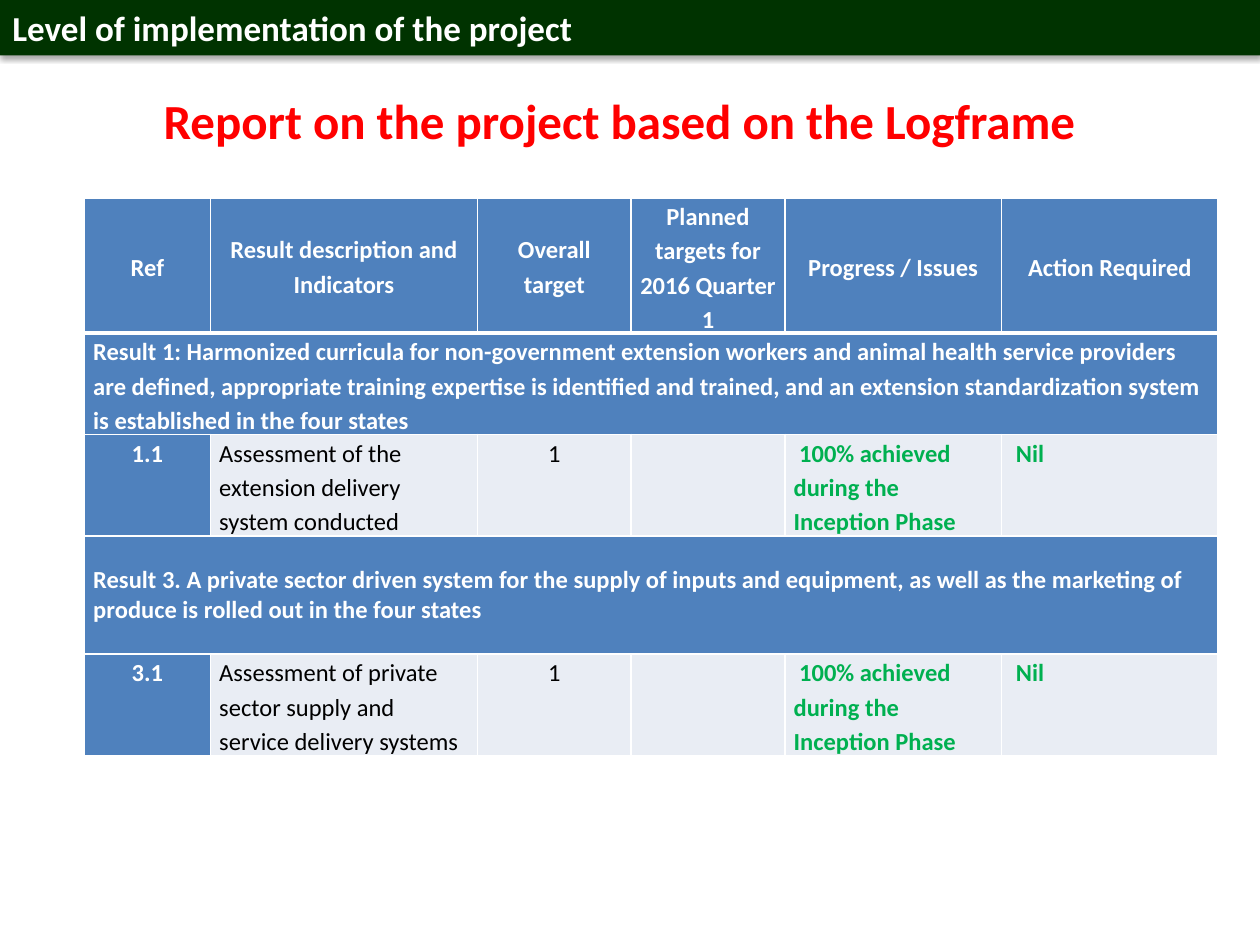
from lxml import etree
from pptx import Presentation
from pptx.dml.color import RGBColor
from pptx.enum import shapes, text
from pptx.oxml import parse_xml
from pptx.oxml.ns import nsdecls, qn
from pptx.util import Inches, Pt

WHITE, BLUE, PALE, GREEN = "FFFFFF", "4F81BD", "E9EDF4", "00B050"
COL_WIDTHS = [1, 2.12, 1.22, 1.22, 1.72, 1.72]
ROW_HEIGHTS = [1.07, 0.8, 0.8, 0.94, 0.8]
HEADERS = ["Ref", "Result description and Indicators", "Overall target",
           "Planned targets for 2016 Quarter 1", "Progress / Issues", "Action Required"]
RESULT_1 = ("Result 1: Harmonized curricula for non-government extension workers and animal "
            "health service providers are defined, appropriate training expertise is identified "
            "and trained, and an extension standardization system is established in the four states")
RESULT_3 = ("Result 3. A private sector driven system for the supply of inputs and equipment, "
            "as well as the marketing of produce is rolled out in the four states")
INDICATOR_1 = "Assessment of the extension delivery system conducted"
INDICATOR_3 = "Assessment of private sector supply and service delivery systems"
ACHIEVED, ACTION = " 100% achieved during the Inception Phase", " Nil"


def rgb(value):
    """Turn a hex string into a colour."""
    return RGBColor.from_string(value)


def write(tf, wording, size, color, bold=True, align=text.PP_ALIGN.LEFT, spacing=1.0):
    """Put one formatted paragraph into a text frame."""
    tf.word_wrap = True
    tf.text = wording
    p = tf.paragraphs[0]
    p.alignment, p.line_spacing = align, spacing
    for r in p.runs:
        r.font.name, r.font.size, r.font.bold = "Calibri", Pt(size), bold
        r.font.color.rgb = rgb(color)


def add_banner(s, wording):
    """Add the dark bar with a soft shadow across the top."""
    sp = s.shapes.add_shape(shapes.MSO_SHAPE.RECTANGLE, 0, 0, Inches(10), Inches(0.44))
    sp.fill.solid()
    sp.fill.fore_color.rgb = rgb("003300")
    sp.line.fill.background()
    sp._element.spPr.append(parse_xml(
        f'<a:effectLst {nsdecls("a")}><a:outerShdw blurRad="{Pt(3.1)}" dist="{Pt(1.8)}" '
        'dir="5400000" rotWithShape="0"><a:srgbClr val="000000"><a:alpha val="35000"/>'
        '</a:srgbClr></a:outerShdw></a:effectLst>'))
    write(sp.text_frame, wording, 20, WHITE)


def add_title(s, wording):
    """Add the red heading."""
    sp = s.shapes.add_textbox(Inches(1.2), Inches(0.67), Inches(7.58), Inches(0.57))
    write(sp.text_frame, wording, 28, "FF0000")


def set_borders(cell, bottom=1):
    """Draw white lines round a cell."""
    tcPr = cell._tc.get_or_add_tcPr()
    for i, (side, width) in enumerate([("L", 1), ("R", 1), ("T", 1), ("B", bottom)]):
        ln = etree.Element(qn(f"a:ln{side}"), w=str(Pt(width)))
        fill = etree.SubElement(ln, qn("a:solidFill"))
        etree.SubElement(fill, qn("a:srgbClr"), val=WHITE)
        tcPr.insert(i, ln)


def fill_cell(cell, wording, fill, color, bold=True, center=False,
              anchor=text.MSO_ANCHOR.TOP, spacing=1.15, bottom=1):
    """Fill, frame and write one table cell."""
    cell.fill.solid()
    cell.fill.fore_color.rgb = rgb(fill)
    set_borders(cell, bottom)
    cell.margin_left = cell.margin_right = Inches(0.07)
    cell.margin_top = cell.margin_bottom = 0
    cell.vertical_anchor = anchor
    align = text.PP_ALIGN.CENTER if center else text.PP_ALIGN.LEFT
    write(cell.text_frame, wording, 14, color, bold, align, spacing)


def fill_result(table, row, wording, anchor, spacing):
    """Write a result statement across the whole row."""
    for cell in table.rows[row].cells:
        set_borders(cell)
    first = table.cell(row, 0)
    first.merge(table.cell(row, len(COL_WIDTHS) - 1))
    for ln in list(first._tc.tcPr):
        first._tc.tcPr.remove(ln)
    fill_cell(first, wording, BLUE, WHITE, anchor=anchor, spacing=spacing)


def fill_indicator(table, row, ref, indicator):
    """Write one indicator row."""
    cells = [(ref, BLUE, WHITE, True, True), (indicator, PALE, "000000", False, False),
             ("1", PALE, "000000", False, True), ("", PALE, "000000", False, False),
             (ACHIEVED, PALE, GREEN, True, False), (ACTION, PALE, GREEN, True, False)]
    for col, values in enumerate(cells):
        fill_cell(table.cell(row, col), *values)


def add_logframe(s):
    """Add the logframe table."""
    table = s.shapes.add_table(len(ROW_HEIGHTS), len(COL_WIDTHS), Inches(0.67), Inches(1.57),
                               Inches(sum(COL_WIDTHS)), Inches(sum(ROW_HEIGHTS))).table
    for col, width in zip(table.columns, COL_WIDTHS):
        col.width = Inches(width)
    for row, height in zip(table.rows, ROW_HEIGHTS):
        row.height = Inches(height)
    for cell, wording in zip(table.rows[0].cells, HEADERS):
        fill_cell(cell, wording, BLUE, WHITE, center=True,
                  anchor=text.MSO_ANCHOR.MIDDLE, bottom=3)
    fill_result(table, 1, RESULT_1, text.MSO_ANCHOR.BOTTOM, 1.15)
    fill_indicator(table, 2, "1.1", INDICATOR_1)
    fill_result(table, 3, RESULT_3, text.MSO_ANCHOR.MIDDLE, 1.0)
    fill_indicator(table, 4, "3.1", INDICATOR_3)


def main():
    """Build and save the slide."""
    prs = Presentation()
    prs.slide_width, prs.slide_height = Inches(10), Inches(7.5)
    s = prs.slides.add_slide(prs.slide_layouts[6])
    add_banner(s, "Level of implementation of the project")
    add_title(s, "Report on the project based on the Logframe")
    add_logframe(s)
    prs.save("out.pptx")


if __name__ == "__main__":
    main()
